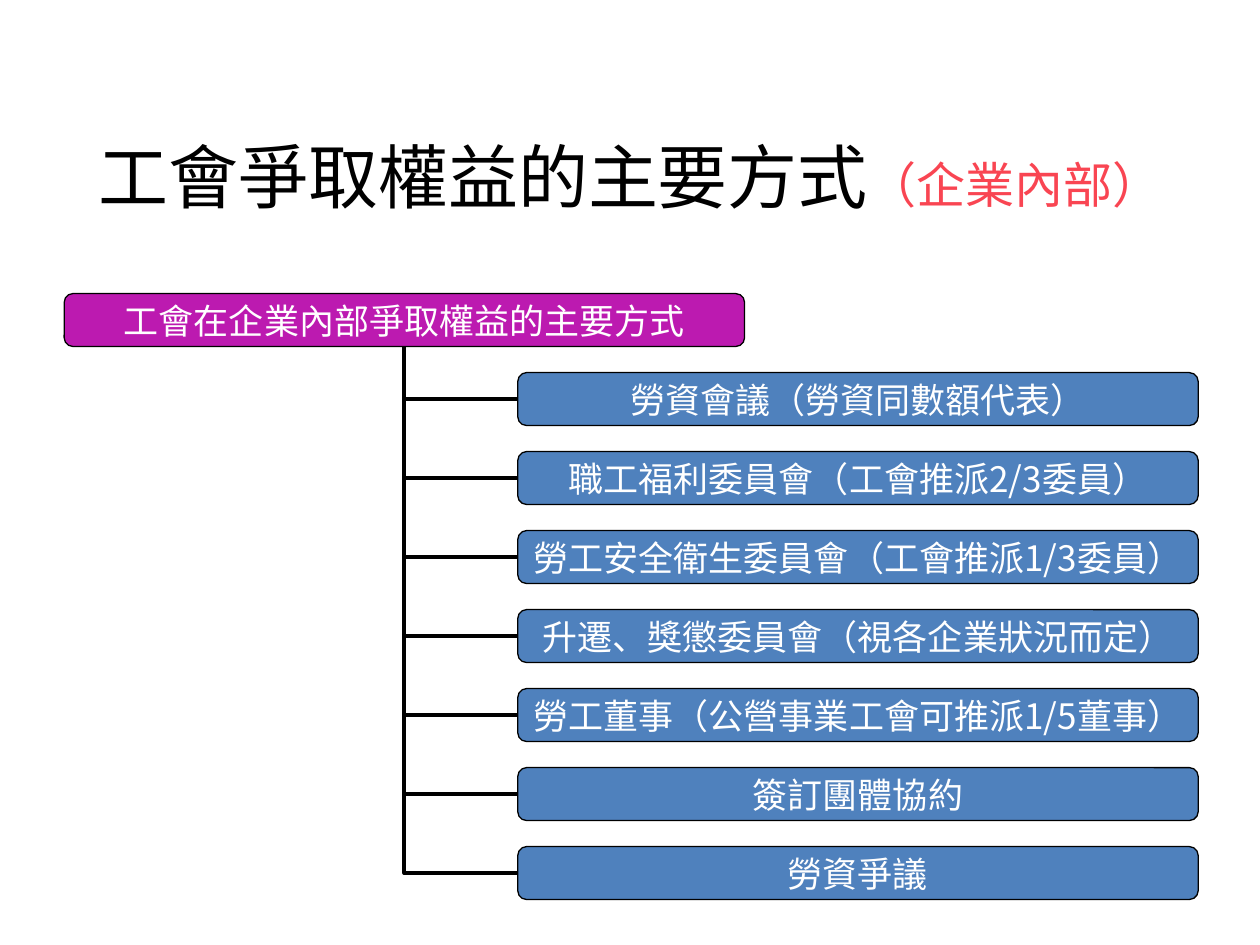
from lxml import etree
from pptx import Presentation
from pptx.dml.color import RGBColor
from pptx.enum.shapes import MSO_CONNECTOR, MSO_SHAPE
from pptx.enum.text import MSO_ANCHOR, PP_ALIGN
from pptx.oxml.ns import qn
from pptx.util import Inches, Pt

ELBOW = MSO_CONNECTOR.ELBOW
ROUNDED = MSO_SHAPE.ROUNDED_RECTANGLE
MIDDLE = MSO_ANCHOR.MIDDLE
CENTER = PP_ALIGN.CENTER
LEFT_SIDE, BOTTOM_SIDE = 1, 2

COLORS = {
    "black": "000000",
    "white": "FFFFFF",
    "accent": "F94552",
    "root": "BC1AB0",
    "branch": "4F81BD",
}
TITLE_FONT = "Calibri"
CJK_FONT = "Noto Sans CJK SC"

TITLE_RUNS = [("工會爭取權益的主要方式", 40, "black"), ("（企業內部）", 28, "accent")]
ROOT = "工會在企業內部爭取權益的主要方式"
BRANCHES = [
    "勞資會議（勞資同數額代表）",
    "職工福利委員會（工會推派2/3委員）",
    "勞工安全衛生委員會（工會推派1/3委員）",
    "升遷、獎懲委員會（視各企業狀況而定）",
    "勞工董事（公營事業工會可推派1/5董事）",
    "簽訂團體協約",
    "勞資爭議",
]

# Chart grid, in inches
COLUMN_LEFT, COLUMN_STEP = 0.51, 3.6
ROW_TOP, ROW_STEP = 2.33, 0.627
BOX_WIDTH, BOX_HEIGHT = 5.4, 0.42


def rgb(name):
    return RGBColor.from_string(COLORS[name])


def set_attributes(target, values):
    for name, value in values.items():
        setattr(target, name, value)


def add_run(paragraph, text, size, color, font_name):
    """Add a run whose East Asian glyphs also use the CJK font."""
    run = paragraph.add_run()
    run.text = text
    set_attributes(run.font, {"size": Pt(size), "name": font_name})
    run.font.color.rgb = rgb(color)
    east_asian = etree.SubElement(run.font._element, qn("a:ea"))
    east_asian.set("typeface", CJK_FONT)


def add_title(slide):
    title = slide.shapes.add_textbox(Inches(0.5), Inches(0.77), Inches(9), Inches(1.25))
    set_attributes(title.text_frame, {"word_wrap": True, "vertical_anchor": MIDDLE})
    paragraph = title.text_frame.paragraphs[0]
    paragraph.alignment = CENTER
    for text, size, color in TITLE_RUNS:
        add_run(paragraph, text, size, color, TITLE_FONT)


def add_box(slide, column, row, text, fill):
    box = slide.shapes.add_shape(
        ROUNDED,
        Inches(COLUMN_LEFT + column * COLUMN_STEP),
        Inches(ROW_TOP + row * ROW_STEP),
        Inches(BOX_WIDTH),
        Inches(BOX_HEIGHT),
    )
    box.shadow.inherit = False
    box.fill.solid()
    box.fill.fore_color.rgb = rgb(fill)
    box.line.color.rgb = rgb("black")
    box.line.width = Pt(0.75)
    set_attributes(box.text_frame, {
        "margin_left": 0, "margin_right": 0, "margin_top": 0, "margin_bottom": 0,
        "word_wrap": False, "vertical_anchor": MIDDLE,
    })
    paragraph = box.text_frame.paragraphs[0]
    paragraph.alignment = CENTER
    add_run(paragraph, text, 20, "white", CJK_FONT)
    return box


def add_elbow(slide, branch, root):
    """Join a branch's left side to the root's bottom with a single bend."""
    connector = slide.shapes.add_connector(ELBOW, 0, 0, 0, 0)
    connector.begin_connect(branch, LEFT_SIDE)
    connector.end_connect(root, BOTTOM_SIDE)
    connector.line.color.rgb = rgb("black")
    connector.line.width = Pt(2.25)
    properties = connector._element.spPr
    properties.find(qn("a:prstGeom")).set("prst", "bentConnector2")
    # A half turn equals flipping both ways
    transform = properties.find(qn("a:xfrm"))
    for flip in ("flipH", "flipV"):
        transform.attrib.pop(flip, None)
    transform.set("rot", str(180 * 60000))
    etree.SubElement(properties, qn("a:effectLst"))


def main():
    presentation = Presentation()
    presentation.slide_width = Inches(10)
    presentation.slide_height = Inches(7.5)
    slide = presentation.slides.add_slide(presentation.slide_layouts[6])

    add_title(slide)
    root = add_box(slide, 0, 0, ROOT, "root")
    for row, text in enumerate(BRANCHES, start=1):
        branch = add_box(slide, 1, row, text, "branch")
        add_elbow(slide, branch, root)

    presentation.save("out.pptx")


if __name__ == "__main__":
    main()
